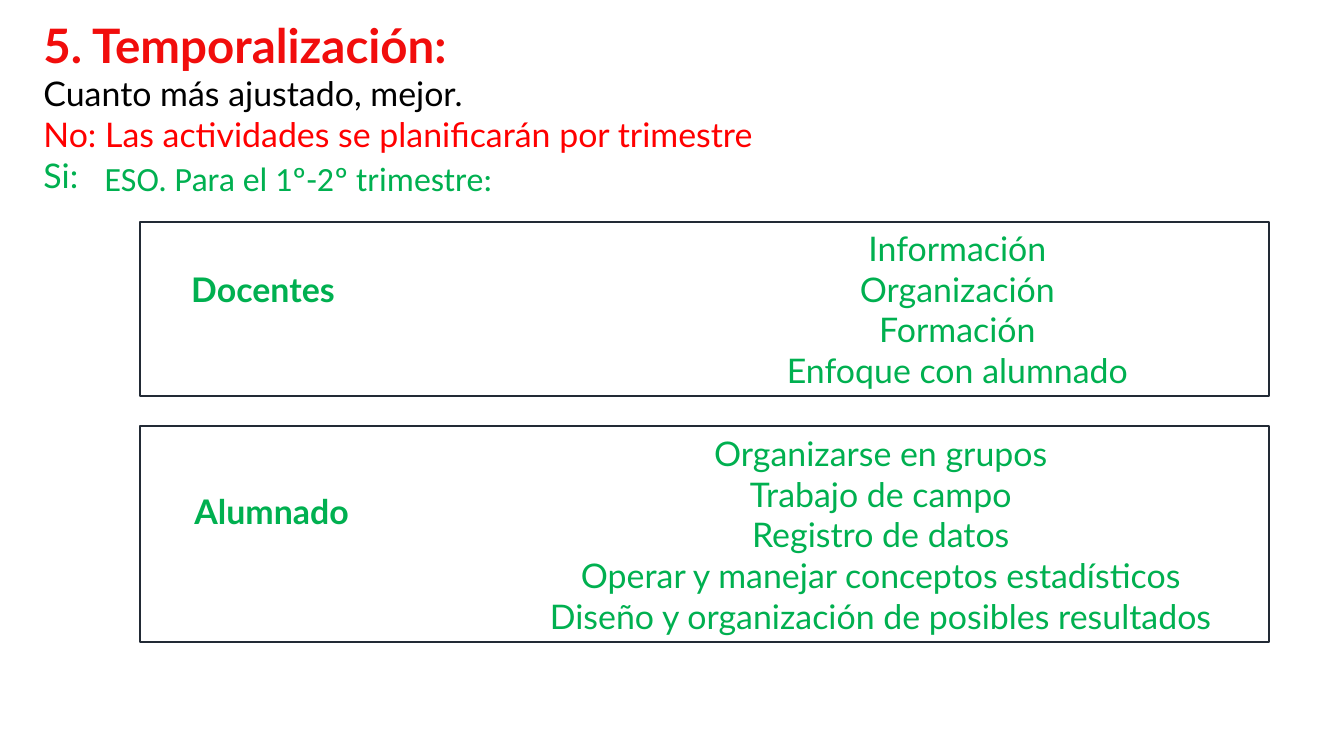
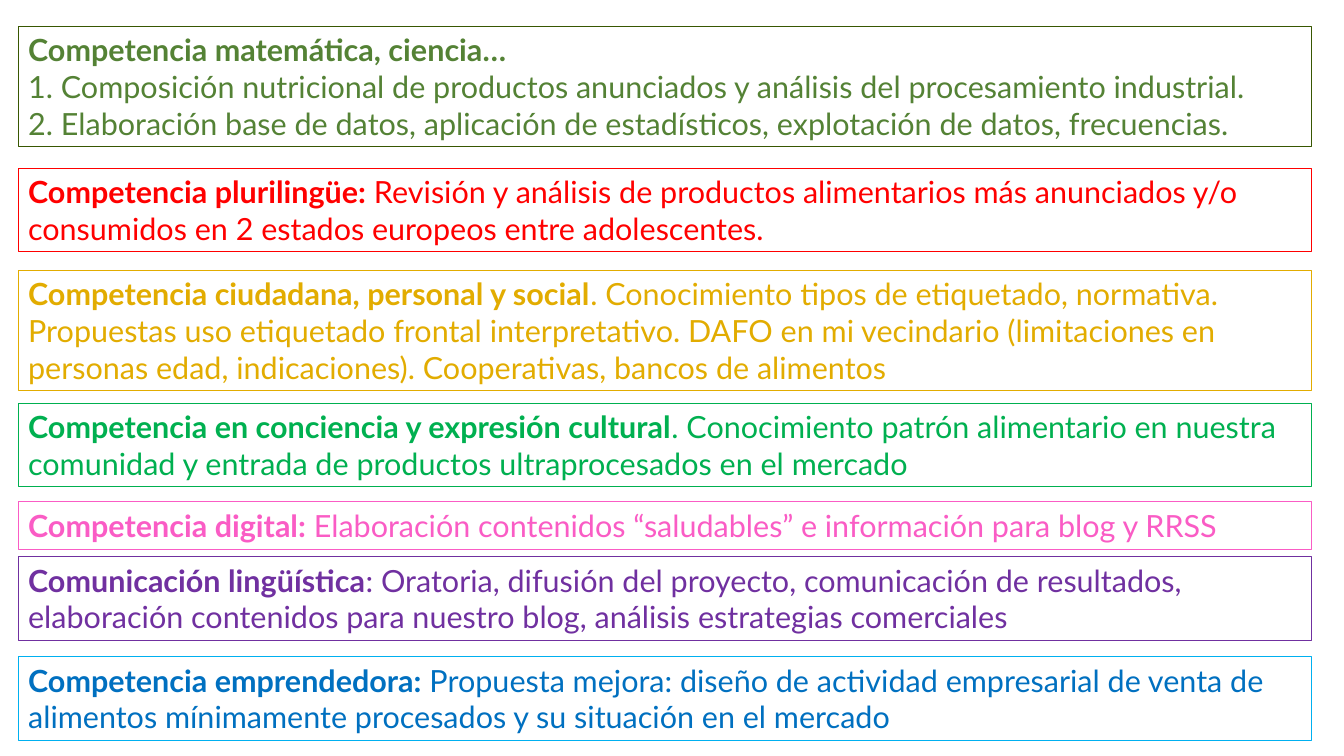
"""Builds two slides on project scheduling and key competences."""
from lxml import etree
from pptx import Presentation
from pptx.dml.color import RGBColor
from pptx.enum import shapes, text
from pptx.oxml.ns import qn
from pptx.util import Cm, Pt

COLOURS = {
    "heading": "F10D0C", "black": "000000", "red": "FF0000",
    "green": "00B050", "navy": "222A35", "olive": "548235",
    "dark olive": "385701", "gold": "E2AC00", "pink": "FA5CC5",
    "purple": "7030A0", "blue": "0070C0", "sky": "00B0F0",
}
FONT = "Lato"
LARGE, MEDIUM, SMALL = 33.9, 24.2, 21.8
CENTRE, LEFT = text.PP_ALIGN.CENTER, text.PP_ALIGN.LEFT

AGENTS = [
    ("Docentes", (4.57, 6.65), (5.59, 4.39), 1.5, 12.75,
     ["Información", "Organización", "Formación", "Enfoque con alumnado"]),
    ("Alumnado", (4.65, 12.24), (10.74, 5.44), 1.75, 8.89,
     ["Organizarse en grupos", "Trabajo de campo", "Registro de datos",
      "Operar y manejar conceptos estadísticos",
      "Diseño y organización de posibles resultados"]),
]

COMPETENCES = [
    (0.66, 3, "olive", "dark olive", [
        ("Competencia matemática, ciencia…", ""),
        ("", "1. Composición nutricional de productos anunciados y análisis "
             "del procesamiento industrial."),
        ("", "2. Elaboración base de datos, aplicación de estadísticos, "
             "explotación de datos, frecuencias.")]),
    (4.24, 2, "red", "red", [
        ("Competencia plurilingüe: ",
         "Revisión y análisis de productos alimentarios más anunciados y/o "
         "consumidos en 2 estados europeos entre adolescentes.")]),
    (6.81, 3, "gold", "gold", [
        ("Competencia ciudadana, personal y social",
         ". Conocimiento tipos de etiquetado, normativa."),
        ("", "Propuestas uso etiquetado frontal interpretativo. DAFO en mi "
             "vecindario (limitaciones en personas edad, indicaciones). "
             "Cooperativas, bancos de alimentos")]),
    (10.16, 2, "green", "green", [
        ("Competencia en conciencia y expresión cultural",
         ". Conocimiento patrón alimentario en nuestra comunidad y entrada "
         "de productos ultraprocesados en el mercado")]),
    (12.65, 1, "pink", "pink", [
        ("Competencia digital: ",
         "Elaboración contenidos “saludables” e información para blog y "
         "RRSS")]),
    (14.02, 2, "purple", "purple", [
        ("Comunicación lingüística",
         ": Oratoria, difusión del proyecto, comunicación de resultados, "
         "elaboración contenidos para nuestro blog, análisis estrategias "
         "comerciales")]),
    (16.54, 2, "blue", "sky", [
        ("Competencia emprendedora: ",
         "Propuesta mejora: diseño de actividad empresarial de venta de "
         "alimentos mínimamente procesados y su situación en el mercado")]),
]


def rgb(name):
    """Return the named colour."""
    return RGBColor.from_string(COLOURS[name])


def style(font, size, colour, bold=False, face=FONT):
    """Set the face, size, colour and weight of a font."""
    font.name, font.size, font.bold = face, Pt(size), bold
    font.color.rgb = rgb(colour)


def place(item, left, top, width, height):
    """Move and size a shape, in centimetres."""
    item.left, item.top = Cm(left), Cm(top)
    item.width, item.height = Cm(width), Cm(height)


def frame_of(item, anchor):
    """Return the wrapped, fixed-size text frame of a shape."""
    frame = item.text_frame
    frame.word_wrap = True
    frame.auto_size = text.MSO_AUTO_SIZE.NONE
    frame.vertical_anchor = anchor
    return frame


def add_label(slide, wording, left, top, width, **look):
    """Add a one-line green label."""
    label = slide.shapes.add_textbox(Cm(left), Cm(top), Cm(width), Cm(1.3))
    frame = frame_of(label, text.MSO_ANCHOR.TOP)
    frame.text = wording
    style(frame.paragraphs[0].runs[0].font, MEDIUM, "green", **look)


def add_panel(slide, left, top, width, height, outline, weight):
    """Add an outlined rectangle and return its text frame."""
    panel = slide.shapes.add_shape(
        shapes.MSO_SHAPE.RECTANGLE, Cm(left), Cm(top), Cm(width), Cm(height))
    panel.shadow.inherit = False
    panel.fill.background()
    panel.line.color.rgb = rgb(outline)
    panel.line.width = Pt(weight)
    return frame_of(panel, text.MSO_ANCHOR.MIDDLE)


def fill_title(slide, wording):
    """Write the slide heading."""
    place(slide.shapes.title, 0.84, 0.28, 30.63, 1.7)
    frame = frame_of(slide.shapes.title, text.MSO_ANCHOR.TOP)
    frame.text = wording
    heading = frame.paragraphs[0]
    heading.alignment = LEFT
    style(heading.runs[0].font, LARGE, "heading", bold=True)


def fill_body(slide, lines):
    """Write unbulleted lines, each in its own colour."""
    body = slide.placeholders[1]
    place(body, 0.84, 1.71, 30.63, 3.4)
    frame = frame_of(body, text.MSO_ANCHOR.TOP)
    frame.text = "\n".join(wording for wording, _ in lines)
    for paragraph, (_, colour) in zip(frame.paragraphs, lines):
        properties = paragraph._p.get_or_add_pPr()
        properties.set("marL", "0")
        properties.set("indent", "0")
        etree.SubElement(properties, qn("a:buNone"))
        paragraph.space_before = Pt(0)
        style(paragraph.runs[0].font, MEDIUM, colour)


def add_agent(slide, name, label_at, span, weight, indent, tasks):
    """Add a panel of centred tasks with the agent's name at its left."""
    top, height = span
    frame = add_panel(slide, 3.53, top, 28.45, height, "navy", weight)
    frame.text = "\n".join(tasks)
    for paragraph in frame.paragraphs:
        paragraph.alignment = CENTRE
        paragraph._p.get_or_add_pPr().set("marL", str(Cm(indent)))
        style(paragraph.runs[0].font, MEDIUM, "green")
    add_label(slide, name, *label_at, 6.8, bold=True)


def add_competence(slide, top, line_count, colour, outline, parts):
    """Add a panel whose paragraphs pair a bold lead with plain wording."""
    height = 0.92 * line_count + 0.27
    frame = add_panel(slide, 0.46, top, 32.6, height, outline, 0.75)
    frame.text = "\n".join(lead for lead, _ in parts)
    for paragraph, (_, rest) in zip(frame.paragraphs, parts):
        paragraph.alignment = LEFT
        for run in paragraph.runs:
            style(run.font, SMALL, colour, bold=True)
        if rest:
            run = paragraph.add_run()
            run.text = rest
            style(run.font, SMALL, colour)


def main():
    """Build and save the presentation."""
    deck = Presentation()
    deck.slide_width, deck.slide_height = Cm(33.87), Cm(19.05)

    schedule = deck.slides.add_slide(deck.slide_layouts[1])
    fill_title(schedule, "5. Temporalización:")
    fill_body(schedule, [
        ("Cuanto más ajustado, mejor.", "black"),
        ("No: Las actividades se planificarán por trimestre", "red"),
        ("Si:", "green")])
    add_label(schedule, "ESO. Para el 1º-2º trimestre:", 2.39, 3.86, 16.94,
              face="Calibri")
    for agent in AGENTS:
        add_agent(schedule, *agent)

    competences = deck.slides.add_slide(deck.slide_layouts[6])
    for competence in COMPETENCES:
        add_competence(competences, *competence)

    deck.save("out.pptx")


if __name__ == "__main__":
    main()
